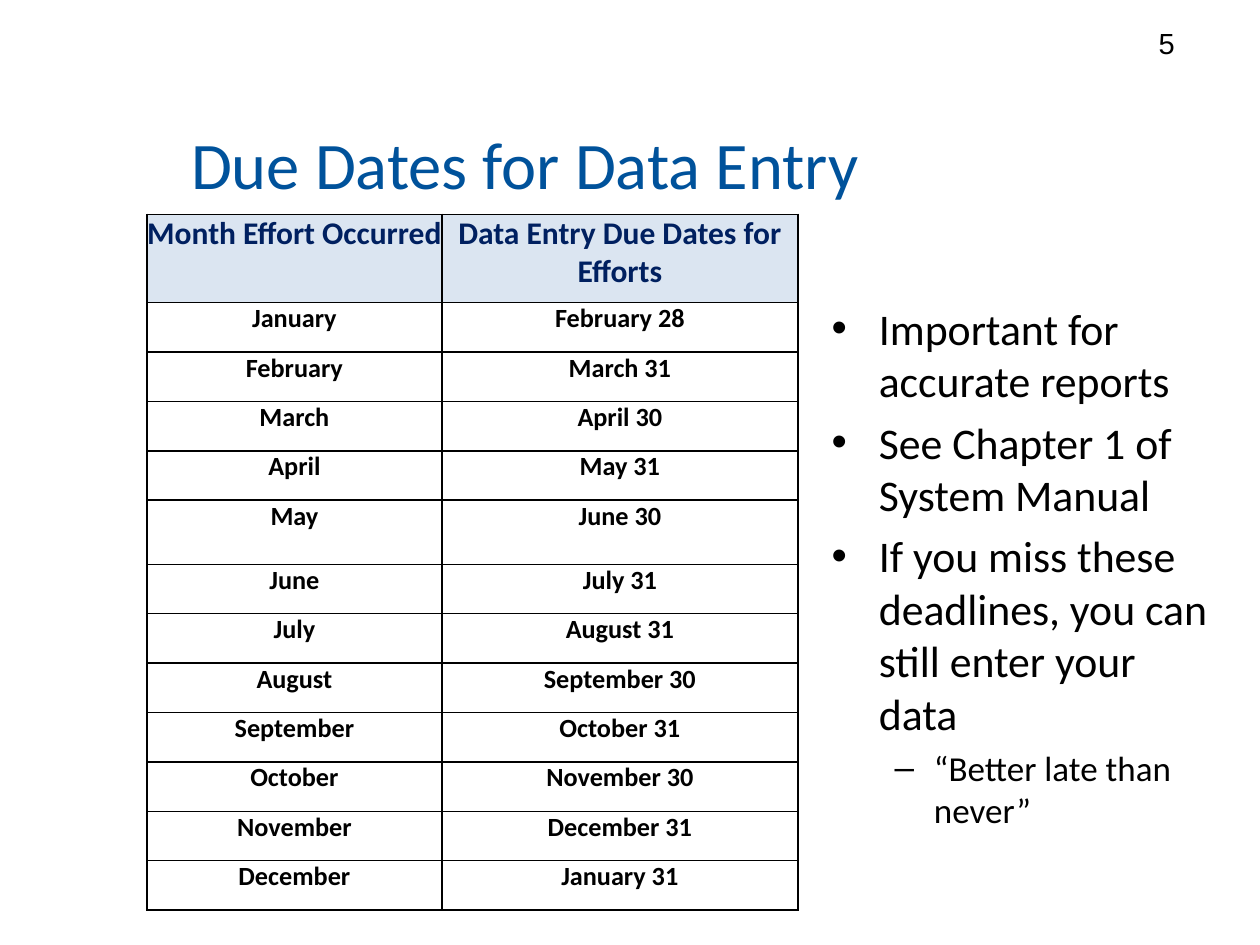
import pptx
import pptx.dml.color
import pptx.enum.text
import pptx.oxml
import pptx.oxml.ns
import pptx.util

Pt = pptx.util.Pt
Align = pptx.enum.text.PP_ALIGN
Anchor = pptx.enum.text.MSO_ANCHOR

COLORS = {
    "title": "00529B",
    "heading": "002060",
    "heading_fill": "DBE5F1",
    "text": "000000",
    "border": "000000",
}

BULLETS = [
    ("Important for accurate reports", 0),
    ("See Chapter 1 of System Manual", 0),
    ("If you miss these deadlines, you can still enter your data", 0),
    ("“Better late than never”", 1),
]

HEADINGS = ("Month Effort Occurred", "Data Entry Due Dates for Efforts")
DUE_DATES = [
    ("January", "February 28"),
    ("February", "March 31"),
    ("March", "April 30"),
    ("April", "May 31"),
    ("May", "June 30"),
    ("June", "July 31"),
    ("July", "August 31"),
    ("August", "September 30"),
    ("September", "October 31"),
    ("October", "November 30"),
    ("November", "December 31"),
    ("December", "January 31"),
]
COLUMN_WIDTHS = (168.5, 203.5)
HEADING_HEIGHT = 50.4
ROW_HEIGHT = 28.25
TALL_ROW_HEIGHT = 36.6


def write_text(paragraph, text, size, color="text", font="Calibri",
               bold=False, align=Align.LEFT, level=0):
    paragraph.alignment = align
    paragraph.level = level
    run = paragraph.add_run()
    run.text = text
    run.font.name = font
    run.font.size = Pt(size)
    run.font.bold = bold
    run.font.color.rgb = pptx.dml.color.RGBColor.from_string(COLORS[color])


def place(shape, left, top, width, height):
    shape.left, shape.top = Pt(left), Pt(top)
    shape.width, shape.height = Pt(width), Pt(height)


def add_title(slide, text):
    title = slide.shapes.title
    place(title, 102, 69, 648, 48.5)
    title.text_frame.auto_size = pptx.enum.text.MSO_AUTO_SIZE.NONE
    title.text_frame.vertical_anchor = Anchor.MIDDLE
    write_text(title.text_frame.paragraphs[0], text, 38, color="title")


def add_page_number(slide, text):
    box = slide.shapes.add_textbox(Pt(655), Pt(10.8), Pt(58), Pt(27))
    box.text_frame.word_wrap = True
    write_text(box.text_frame.paragraphs[0], text, 16.6, font="Arial")


def add_bullets(slide):
    body = slide.placeholders[1]
    place(body, 468, 168.8, 237.5, 354)
    frame = body.text_frame
    frame.auto_size = pptx.enum.text.MSO_AUTO_SIZE.NONE
    for index, (text, level) in enumerate(BULLETS):
        paragraph = frame.add_paragraph() if index else frame.paragraphs[0]
        write_text(paragraph, text, 20 if level else 25, level=level)


def add_borders(cell):
    properties = cell._tc.get_or_add_tcPr()
    for side in ("lnL", "lnR", "lnT", "lnB"):
        properties.append(pptx.oxml.parse_xml(
            f'<a:{side} {pptx.oxml.ns.nsdecls("a")} w="{Pt(1)}"><a:solidFill>'
            f'<a:srgbClr val="{COLORS["border"]}"/></a:solidFill></a:{side}>'))


def fill_cell(cell, text, heading):
    cell.margin_left = cell.margin_right = 0
    cell.margin_top = cell.margin_bottom = 0
    cell.vertical_anchor = Anchor.TOP
    add_borders(cell)
    if heading:
        cell.fill.solid()
        cell.fill.fore_color.rgb = pptx.dml.color.RGBColor.from_string(
            COLORS["heading_fill"])
    else:
        cell.fill.background()
    write_text(cell.text_frame.paragraphs[0], text, 18 if heading else 15,
               color="heading" if heading else "text",
               bold=True, align=Align.CENTER)


def row_height(month):
    if month == HEADINGS[0]:
        return HEADING_HEIGHT
    return TALL_ROW_HEIGHT if month == "May" else ROW_HEIGHT


def add_due_dates(slide):
    rows = [HEADINGS] + DUE_DATES
    heights = [row_height(month) for month, due_date in rows]
    table = slide.shapes.add_table(
        len(rows), len(HEADINGS), Pt(84), Pt(122.5),
        Pt(sum(COLUMN_WIDTHS)), Pt(sum(heights))).table
    table.horz_banding = False
    for column, width in zip(table.columns, COLUMN_WIDTHS):
        column.width = Pt(width)
    for index, (row, height) in enumerate(zip(table.rows, heights)):
        row.height = Pt(height)
        for cell, text in zip(row.cells, rows[index]):
            fill_cell(cell, text, heading=index == 0)


def main():
    presentation = pptx.Presentation()
    presentation.slide_width = Pt(720)
    presentation.slide_height = Pt(540)
    slide = presentation.slides.add_slide(presentation.slide_layouts[1])
    add_title(slide, "Due Dates for Data Entry")
    add_page_number(slide, "5")
    add_due_dates(slide)
    add_bullets(slide)
    presentation.save("out.pptx")


if __name__ == "__main__":
    main()
